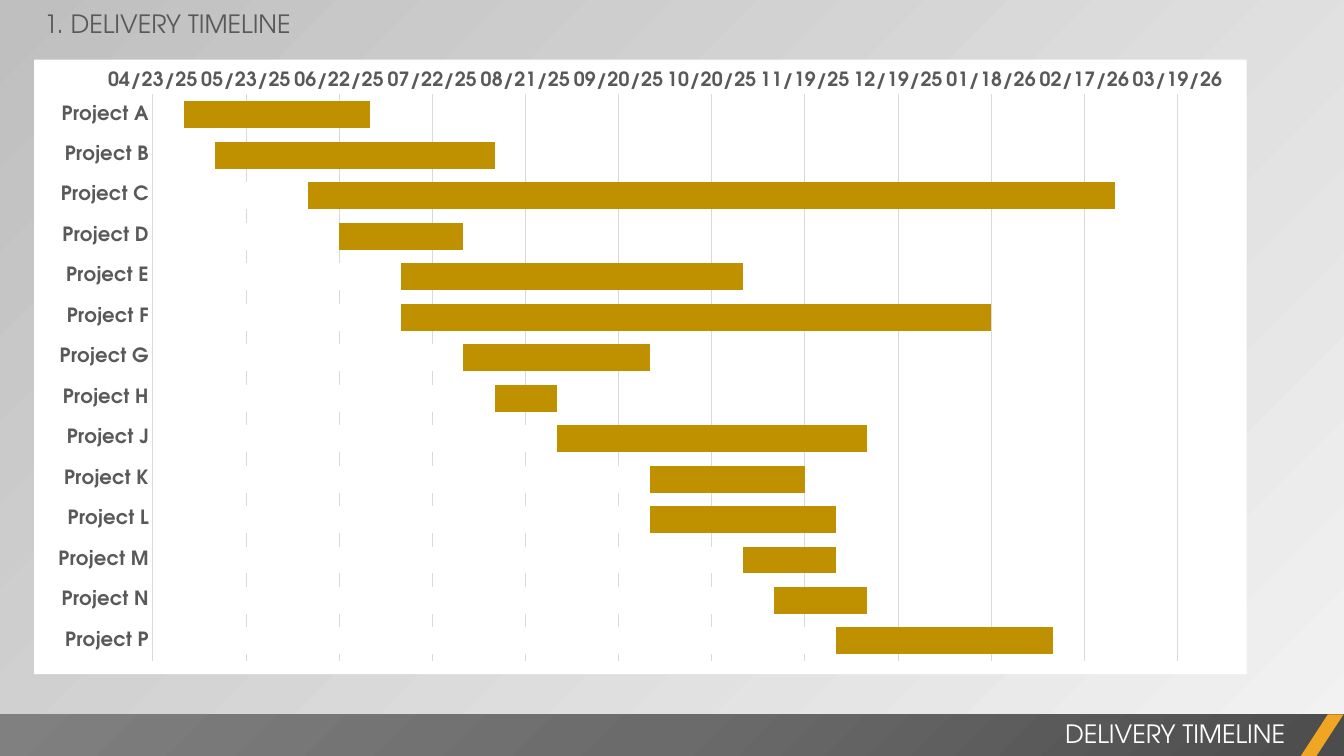
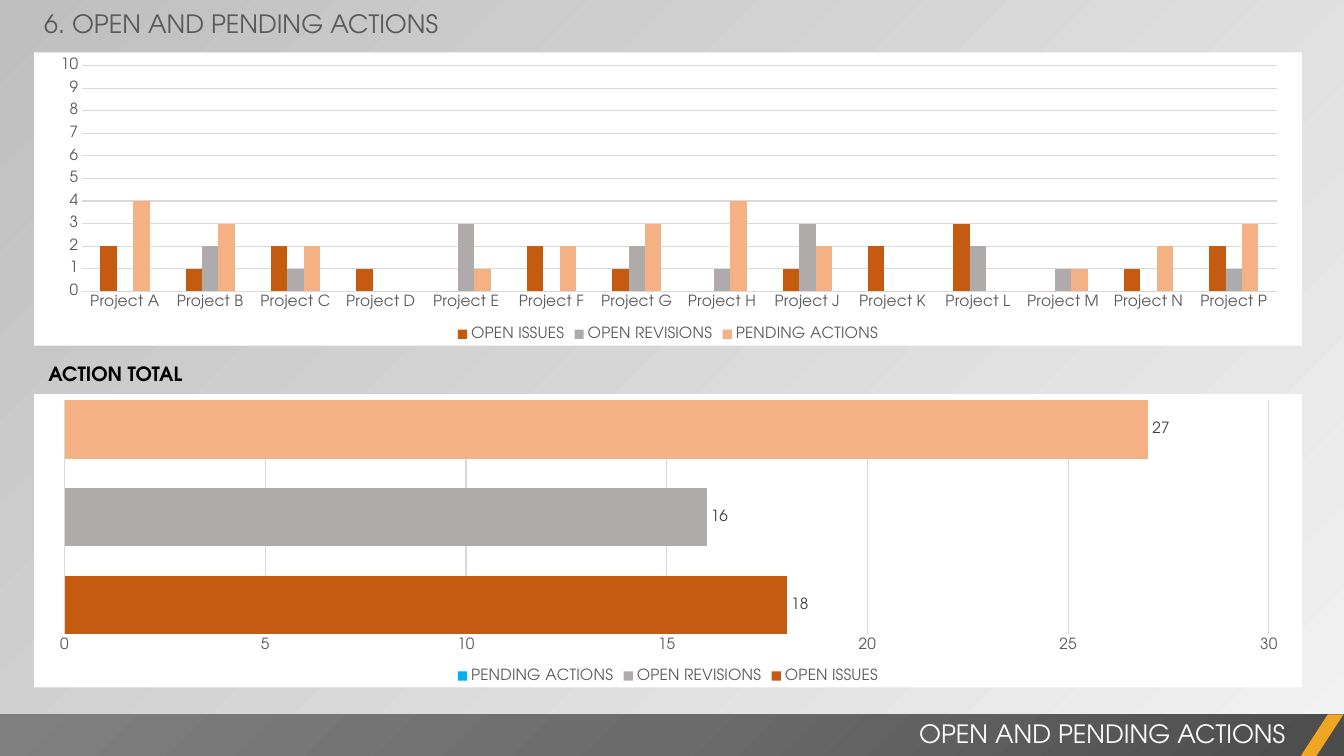
from dataclasses import dataclass
from typing import NamedTuple, Optional

from pptx import Presentation, util as u
from pptx.chart import data as chart_data
from pptx.dml.color import RGBColor
from pptx.enum import chart as ce, shapes, text
from pptx.oxml import parse_xml
from pptx.oxml.ns import nsdecls, qn

FONT = "TeX Gyre Adventor"
BLACK = RGBColor(0x00, 0x00, 0x00)
WHITE = RGBColor(0xFF, 0xFF, 0xFF)
GREY_TEXT = RGBColor(0x59, 0x59, 0x59)
LABEL_GREY = RGBColor(0x40, 0x40, 0x40)
GRID_GREY = RGBColor(0xD9, 0xD9, 0xD9)
PAGE_LIGHT = RGBColor(0xF2, 0xF2, 0xF2)
PAGE_DARK = RGBColor(0xBF, 0xBF, 0xBF)
BAND_DARK = RGBColor(0x4C, 0x4C, 0x4C)
BAND_MID = RGBColor(0x6B, 0x6B, 0x6B)
BAND_LIGHT = RGBColor(0x80, 0x80, 0x80)
AMBER = RGBColor(0xF0, 0xA6, 0x22)
GOLD = RGBColor(0xBF, 0x90, 0x00)
RUST = RGBColor(0xC5, 0x5A, 0x11)
ASH = RGBColor(0xAF, 0xAB, 0xAB)
PEACH = RGBColor(0xF4, 0xB1, 0x83)
SKY = RGBColor(0x00, 0xB0, 0xF0)

PAGE_WIDTH, PAGE_HEIGHT = u.Cm(33.87), u.Cm(19.05)
MARGIN = u.Cm(0.86)
LINE_HEIGHT = u.Cm(1.02)
BAND_TOP, BAND_HEIGHT = u.Cm(18), u.Cm(1.07)


class Project(NamedTuple):
    """One project; start and end are date serial numbers."""
    name: str
    start: int
    end: int
    issues: int
    revisions: int
    pending: int


PROJECTS = [
    Project("Project A", 45780, 45840, 2, 0, 4),
    Project("Project B", 45790, 45880, 1, 2, 3),
    Project("Project C", 45820, 46080, 2, 1, 2),
    Project("Project D", 45830, 45870, 1, 0, 0),
    Project("Project E", 45850, 45960, 0, 3, 1),
    Project("Project F", 45850, 46040, 2, 0, 2),
    Project("Project G", 45870, 45930, 1, 2, 3),
    Project("Project H", 45880, 45900, 0, 1, 4),
    Project("Project J", 45900, 46000, 1, 3, 2),
    Project("Project K", 45930, 45980, 2, 0, 0),
    Project("Project L", 45930, 45990, 3, 2, 0),
    Project("Project M", 45960, 45990, 0, 1, 1),
    Project("Project N", 45970, 46000, 1, 0, 2),
    Project("Project P", 45990, 46060, 2, 1, 3),
]
NAMES = [project.name for project in PROJECTS]


class Box(NamedTuple):
    left: int
    top: int
    width: int
    height: int


class PlotArea(NamedTuple):
    """Inner plot area as fractions of the chart frame."""
    x: float
    y: float
    w: float
    h: float


class Series(NamedTuple):
    name: str
    values: list[int]
    color: RGBColor


class Stop(NamedTuple):
    position: int
    color: RGBColor
    opacity: int = 100


@dataclass
class ChartStyle:
    kind: ce.XL_CHART_TYPE
    plot_area: PlotArea
    minimum: int
    maximum: int
    step: int
    gap: int
    overlap: int = 0
    size: int = 11
    bold: bool = False
    number_format: str = "0"
    legend: bool = True
    labels: bool = False
    category_axis: bool = True
    reverse: bool = False


def set_gradient(fill, owner, stops: list[Stop], shade: str) -> None:
    """Give the owner's fill a gradient with opacity and any shade geometry."""
    fill.gradient()
    stop_xml = "".join(
        f'<a:gs pos="{stop.position * 1000}"><a:srgbClr val="{stop.color}">'
        f'<a:alpha val="{stop.opacity * 1000}"/></a:srgbClr></a:gs>'
        for stop in stops)
    default = next(owner.iter(qn("a:gradFill")))
    default.getparent().replace(default, parse_xml(
        f'<a:gradFill {nsdecls("a")} rotWithShape="1">'
        f"<a:gsLst>{stop_xml}</a:gsLst>{shade}</a:gradFill>"))


def style_font(font, size: float, color: RGBColor, bold: bool = False) -> None:
    font.name = FONT
    font.size = u.Pt(size)
    font.bold = bold
    font.color.rgb = color


def write_line(shape, box: Box, words: str, size: float, color: RGBColor,
               bold: bool = False, wrap: bool = False,
               align=text.PP_ALIGN.LEFT) -> None:
    shape.left, shape.top, shape.width, shape.height = box
    frame = shape.text_frame
    frame.word_wrap = wrap
    frame.auto_size = text.MSO_AUTO_SIZE.SHAPE_TO_FIT_TEXT
    frame.vertical_anchor = text.MSO_ANCHOR.TOP
    para = frame.paragraphs[0]
    para.alignment = align
    span = para.add_run()
    span.text = words
    style_font(span.font, size, color, bold)


def add_plain_shape(page, kind: shapes.MSO_SHAPE, box: Box):
    shape = page.shapes.add_shape(kind, *box)
    shape.shadow.inherit = False
    shape.line.fill.background()
    return shape


def add_footer(page, words: str) -> None:
    band = add_plain_shape(page, shapes.MSO_SHAPE.RECTANGLE,
                           Box(0, BAND_TOP, PAGE_WIDTH, BAND_HEIGHT))
    set_gradient(
        band.fill, band.element,
        [Stop(0, BAND_DARK), Stop(50, BAND_MID), Stop(100, BAND_LIGHT)],
        '<a:path path="circle"><a:fillToRect l="100000" t="100000"/></a:path>')
    box = Box(u.Cm(13.34), u.Cm(17.98), u.Cm(19.3), LINE_HEIGHT)
    write_line(page.shapes.add_textbox(*box), box, words, 18, WHITE,
               wrap=True, align=text.PP_ALIGN.RIGHT)
    slash = add_plain_shape(page, shapes.MSO_SHAPE.PARALLELOGRAM,
                            Box(u.Cm(32.77), BAND_TOP, u.Cm(1.09), BAND_HEIGHT))
    slash.adjustments[0] = 0.65
    slash.fill.solid()
    slash.fill.fore_color.rgb = AMBER


def add_page(deck, number: int, name: str, title_width: int):
    page = deck.slides.add_slide(deck.slide_layouts[5])
    write_line(page.shapes.title, Box(MARGIN, u.Cm(0.08), title_width, LINE_HEIGHT),
               f"{number}. {name}", 18, GREY_TEXT)
    add_footer(page, name)
    return page


def frame_chart(chart, area: PlotArea) -> None:
    """Paint the chart frame white and pin the inner plot area."""
    chart_node = chart.element.find(qn("c:chart"))
    chart_node.addnext(parse_xml(
        f'<c:spPr {nsdecls("c", "a")}><a:solidFill><a:srgbClr val="{WHITE}"/>'
        "</a:solidFill><a:ln><a:noFill/></a:ln></c:spPr>"))
    plot_node = chart_node.find(qn("c:plotArea"))
    for layout in plot_node.findall(qn("c:layout")):
        plot_node.remove(layout)
    modes = '<c:xMode val="edge"/><c:yMode val="edge"/>'
    extents = "".join(f'<c:{key} val="{value}"/>'
                      for key, value in area._asdict().items())
    plot_node.insert(0, parse_xml(
        f'<c:layout {nsdecls("c")}><c:manualLayout><c:layoutTarget val="inner"/>'
        f"{modes}{extents}</c:manualLayout></c:layout>"))


def style_axes(chart, style: ChartStyle) -> None:
    for axis in (chart.category_axis, chart.value_axis):
        axis.major_tick_mark = axis.minor_tick_mark = ce.XL_TICK_MARK.NONE
        style_font(axis.tick_labels.font, style.size, GREY_TEXT, style.bold)
    categories, values = chart.category_axis, chart.value_axis
    categories.visible = style.category_axis
    categories.reverse_order = style.reverse
    values.minimum_scale = style.minimum
    values.maximum_scale = style.maximum
    values.major_unit = style.step
    values.tick_labels.number_format = style.number_format
    values.tick_labels.number_format_is_linked = False
    values.format.line.fill.background()
    values.has_major_gridlines = True
    for line in (categories.format.line, values.major_gridlines.format.line):
        line.color.rgb = GRID_GREY
        line.width = u.Pt(0.75)


def add_bars(page, box: Box, categories: list[str], series: list[Series],
             style: ChartStyle):
    data = chart_data.CategoryChartData(number_format="0")
    data.categories = categories
    for item in series:
        data.add_series(item.name, item.values)
    chart = page.shapes.add_chart(style.kind, *box, data).chart
    style_font(chart.font, style.size, BLACK, style.bold)
    frame_chart(chart, style.plot_area)
    chart.has_title = False
    chart.has_legend = style.legend
    if style.legend:
        chart.legend.position = ce.XL_LEGEND_POSITION.BOTTOM
        chart.legend.include_in_layout = False
        style_font(chart.legend.font, style.size, GREY_TEXT)
    style_axes(chart, style)
    plot = chart.plots[0]
    plot.vary_by_categories = False
    plot.gap_width, plot.overlap = style.gap, style.overlap
    for bars, item in zip(plot.series, series):
        bars.format.fill.solid()
        bars.format.fill.fore_color.rgb = item.color
        if style.labels:
            labels = bars.data_labels
            labels.show_value = True
            labels.position = ce.XL_LABEL_POSITION.OUTSIDE_END
            style_font(labels.font, style.size, LABEL_GREY)
    return chart


def build_timeline(deck) -> None:
    page = add_page(deck, 1, "DELIVERY TIMELINE", u.Cm(6.83))
    # White start bars cover the end bars, leaving only each project's span.
    spans = [Series("End", [project.end for project in PROJECTS], GOLD),
             Series("Start", [project.start for project in PROJECTS], WHITE)]
    add_bars(page, Box(MARGIN, u.Cm(1.5), u.Cm(30.56), u.Cm(15.49)), NAMES, spans,
             ChartStyle(ce.XL_CHART_TYPE.BAR_CLUSTERED,
                        PlotArea(0.098, 0.057, 0.845, 0.922),
                        45770, 46100, 30, gap=50, overlap=100, size=14, bold=True,
                        number_format="mm/dd/yy;@", legend=False, reverse=True))


def build_actions(deck) -> None:
    page = add_page(deck, 6, "OPEN AND PENDING ACTIONS", u.Cm(10.57))
    width, height = u.Cm(31.95), u.Cm(7.39)
    counts = [
        Series("OPEN ISSUES", [project.issues for project in PROJECTS], RUST),
        Series("OPEN REVISIONS", [project.revisions for project in PROJECTS], ASH),
        Series("PENDING ACTIONS", [project.pending for project in PROJECTS], PEACH),
    ]
    add_bars(page, Box(MARGIN, u.Cm(1.32), width, height), NAMES, counts,
             ChartStyle(ce.XL_CHART_TYPE.COLUMN_CLUSTERED,
                        PlotArea(0.038, 0.045, 0.942, 0.77), 0, 10, 1, gap=219))

    heading = Box(u.Cm(0.97), u.Cm(8.99), u.Cm(3.96), u.Cm(0.86))
    write_line(page.shapes.add_textbox(*heading), heading, "ACTION TOTAL", 14,
               BLACK, bold=True)

    totals = [Series(item.name, [sum(item.values)], color)
              for item, color in zip(counts, (RUST, ASH, SKY))]
    chart = add_bars(page, Box(MARGIN, u.Cm(9.93), width, height), ["1"], totals,
                     ChartStyle(ce.XL_CHART_TYPE.BAR_CLUSTERED,
                                PlotArea(0.024, 0.02, 0.95, 0.8), 0, 30, 5, gap=0,
                                overlap=-50, labels=True, category_axis=False))
    # The pending bar differs from its legend key.
    pending_fill = chart.plots[0].series[2].points[0].format.fill
    pending_fill.solid()
    pending_fill.fore_color.rgb = PEACH


def main() -> None:
    deck = Presentation()
    deck.slide_width, deck.slide_height = PAGE_WIDTH, PAGE_HEIGHT
    master = deck.slide_master
    set_gradient(master.background.fill, master.element,
                 [Stop(0, PAGE_LIGHT, 40), Stop(100, PAGE_DARK)],
                 '<a:lin ang="13500000" scaled="0"/>')
    build_timeline(deck)
    build_actions(deck)
    deck.save("out.pptx")


if __name__ == "__main__":
    main()
